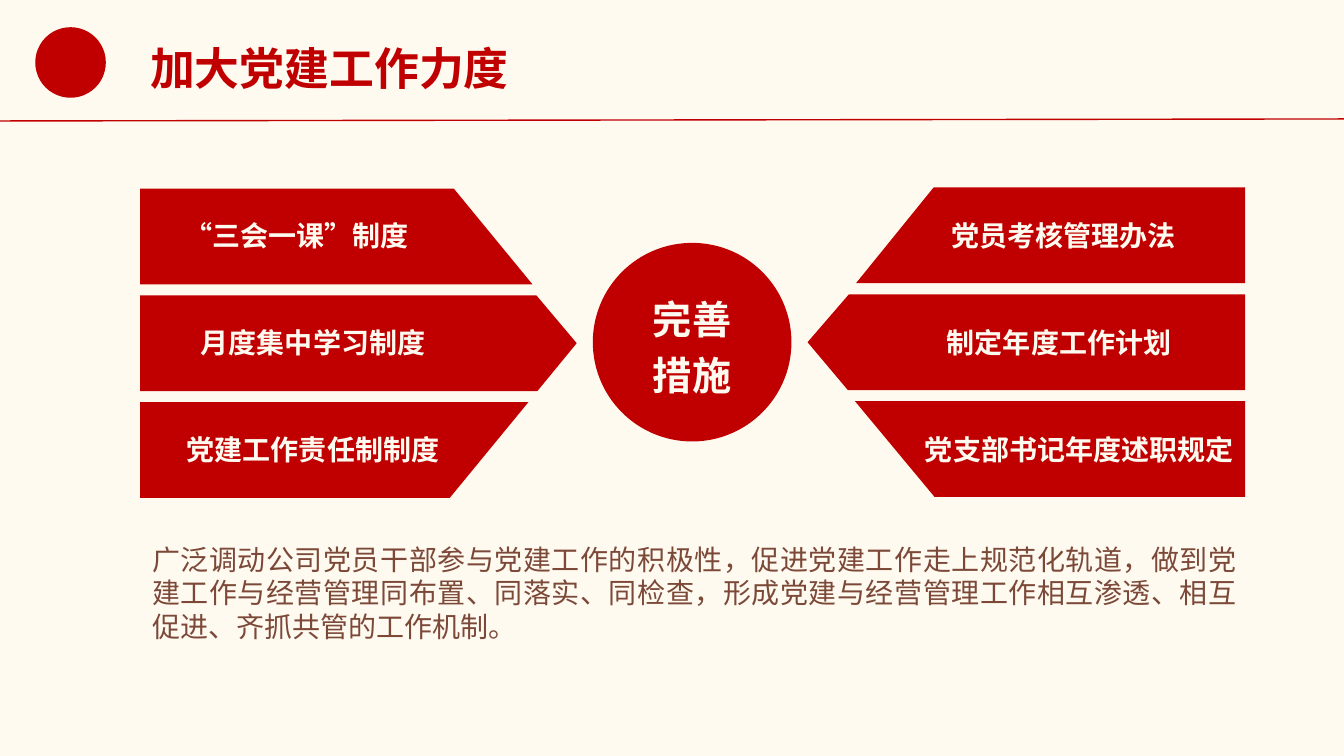
from lxml.etree import SubElement as Sub
from pptx import Presentation
from pptx.dml.color import RGBColor as Rgb
from pptx.enum.shapes import MSO_CONNECTOR as Conn, MSO_SHAPE as Kind
from pptx.enum.text import MSO_ANCHOR as Anchor, MSO_AUTO_SIZE as Fit, PP_ALIGN as Align
from pptx.oxml.ns import qn
from pptx.util import Inches, Pt

HUES = {"red": "C00000", "cream": "FFFAF0", "brown": "7C4939"}
FONT = "Noto Sans CJK SC"


def hue(name):
    return Rgb.from_string(HUES[name])


def write(frame, text, size=20, color="cream", bold=True, align=Align.CENTER, space=None):
    for i, line in enumerate(text.split("\n")):
        para = frame.add_paragraph() if i else frame.paragraphs[0]
        para.alignment = align
        para.line_spacing = space
        run = para.add_run()
        run.text = line
        font = run.font
        font.name, font.size, font.bold = FONT, Pt(size), bold
        font.color.rgb = hue(color)
        Sub(run._r.get_or_add_rPr(), qn("a:ea"), typeface=FONT)


class Page:
    def __init__(self, slide, paint="red"):
        self.slide = slide
        self.paint = paint
        fill = slide.background.fill
        fill.solid()
        fill.fore_color.rgb = hue("cream")

    def coat(self, shape):
        shape.shadow.inherit = False
        shape.fill.solid()
        shape.fill.fore_color.rgb = hue(self.paint)
        shape.line.fill.background()
        return shape

    def oval(self, *box):
        shapes = self.slide.shapes
        return self.coat(shapes.add_shape(Kind.OVAL, *map(Inches, box)))

    def rule(self, *ends):
        line = self.slide.shapes.add_connector(Conn.STRAIGHT, *map(Inches, ends))
        line.line.color.rgb = hue(self.paint)
        line.line.width = Pt(1)
        Sub(line._element.spPr, qn("a:effectLst"))

    def text(self, text, box, wrap=True, group=None, **style):
        shapes = (group or self.slide).shapes
        frame = shapes.add_textbox(*map(Inches, box)).text_frame
        frame.word_wrap = wrap
        frame.auto_size = Fit.SHAPE_TO_FIT_TEXT
        write(frame, text, **style)

    def bar(self, text, edge, tips, top, high, box):
        group = self.slide.shapes.add_group_shape()
        spots = [(edge, 0), *tips, (edge, 1)]
        first, *rest = [(Inches(x), Inches(top + part * high)) for x, part in spots]
        path = group.shapes.build_freeform(*first)
        path.add_line_segments(rest, close=True)
        self.coat(path.convert_to_shape())
        self.text(text, box, group=group)


SIDES = [
    (1.39, 1.87, [
        ("“三会一课”制度", [(4.5, 0), (5.28, 1)], 1.68, 2.53),
        ("月度集中学习制度", [(5.32, 0), (5.72, 0.5), (5.33, 1)], 1.68, 2.85),
        ("党建工作责任制制度", [(5.24, 0), (4.46, 1)], 1.42, 3.37),
    ]),
    (12.35, 1.86, [
        ("党员考核管理办法", [(9.26, 0), (8.49, 1)], 9.06, 2.98),
        ("制定年度工作计划", [(8.42, 0), (8.01, 0.5), (8.41, 1)], 8.97, 3.07),
        ("党支部书记年度述职规定", [(8.48, 0), (9.27, 1)], 8.83, 3.75),
    ]),
]
STEP, HIGH = 1.06, 0.95
BODY = (
    "广泛调动公司党员干部参与党建工作的积极性，促进党建工作走上规范化轨道，"
    "做到党建工作与经营管理同布置、同落实、同检查，"
    "形成党建与经营管理工作相互渗透、相互促进、齐抓共管的工作机制。"
)


def main():
    deck = Presentation()
    deck.slide_width, deck.slide_height = Inches(13.33), Inches(7.5)
    page = Page(deck.slides.add_slide(deck.slide_layouts[6]))

    page.oval(0.35, 0.27, 0.7, 0.7)
    page.rule(0, 1.2, 13.33, 1.18)

    hub = page.oval(5.88, 2.41, 1.97, 1.97).text_frame
    hub.margin_left = hub.margin_right = hub.margin_top = hub.margin_bottom = 0
    hub.vertical_anchor = Anchor.MIDDLE
    write(hub, "完善\n措施", size=28, space=1.2)

    page.text("加大党建工作力度", (1.39, 0.36, 3.79, 0.64), wrap=False,
              size=32, color="red", align=Align.LEFT)

    for edge, top, bars in SIDES:
        for i, (text, tips, left, wide) in enumerate(bars):
            box = (left, 2.12 + i * STEP, wide, 0.44)
            page.bar(text, edge, tips, top + i * STEP, HIGH, box)

    page.text(BODY, (1.41, 5.33, 10.96, 1.11), color="brown", bold=False,
              align=Align.JUSTIFY)
    deck.save("out.pptx")


if __name__ == "__main__":
    main()
